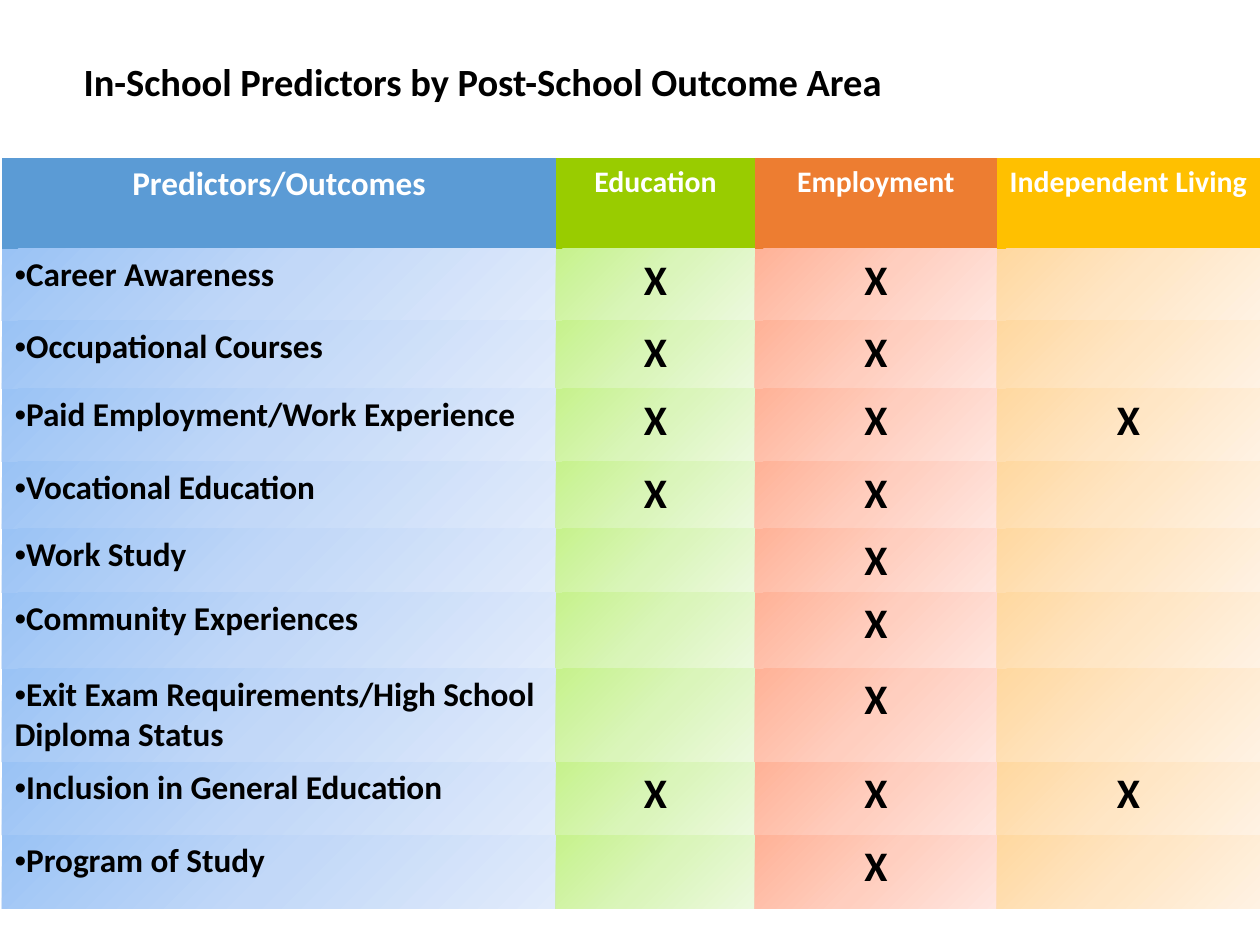
from lxml import etree
from pptx import Presentation, util as u
from pptx.dml import color
from pptx.enum import text
from pptx.oxml import ns

COLORS = {
    "black": "000000",
    "white": "FFFFFF",
    "predictors": "5B9BD5",
    "education": "99CC00",
    "employment": "ED7D31",
    "living": "FFC000",
}
# Start, middle and end of the gradient under each heading
GRADIENTS = {
    "predictors": ("9AC3F5", "C2D8F8", "E1EBFB"),
    "education": ("C6F28C", "DAF5BA", "ECF9DE"),
    "employment": ("FFB297", "FFCEBF", "FFE6E0"),
    "living": ("FFD8A0", "FFE6C5", "FFF2E3"),
}
# Area, heading, heading size, column width
COLUMNS = [
    ("predictors", "Predictors/Outcomes", 19, 554),
    ("education", "Education", 17, 199),
    ("employment", "Employment", 17, 242),
    ("living", "Independent Living", 17, 263),
]
HEADER_HEIGHT = 91
# Predictor, areas it predicts, row height
PREDICTORS = [
    ("Career Awareness", ("education", "employment"), 72),
    ("Occupational Courses", ("education", "employment"), 68),
    ("Paid Employment/Work Experience", ("education", "employment", "living"), 73),
    ("Vocational Education", ("education", "employment"), 67),
    ("Work Study", ("employment",), 63),
    ("Community Experiences", ("employment",), 76),
    ("Exit Exam Requirements/High School Diploma Status", ("employment",), 93),
    ("Inclusion in General Education", ("education", "employment", "living"), 73),
    ("Program of Study", ("employment",), 74),
]
PLAIN_TABLE_STYLE = "{2D5ABB26-0587-4C30-8999-92F81FD0307C}"
CENTER = text.PP_ALIGN.CENTER
LEFT = text.PP_ALIGN.LEFT


def px(length):
    return u.Emu(round(length * 914400 / 126))


class SlideBuilder:
    font = "Calibri"

    def __init__(self, presentation):
        self.slide = presentation.slides.add_slide(presentation.slide_layouts[5])

    def add_text(self, paragraph, words, size, ink="black", align=LEFT):
        paragraph.alignment = align
        run = paragraph.add_run()
        run.text = words
        run.font.name = self.font
        run.font.size = u.Pt(size)
        run.font.bold = True
        run.font.color.rgb = color.RGBColor.from_string(COLORS[ink])

    def title(self, words, left, top, width, height):
        shape = self.slide.shapes.title
        shape.left, shape.top = px(left), px(top)
        shape.width, shape.height = px(width), px(height)
        frame = shape.text_frame
        frame.auto_size = text.MSO_AUTO_SIZE.NONE
        frame.vertical_anchor = text.MSO_ANCHOR.MIDDLE
        frame.paragraphs[0].line_spacing = 0.9
        self.add_text(frame.paragraphs[0], words, 22)

    def table(self, left, top, widths, heights):
        shape = self.slide.shapes.add_table(
            len(heights), len(widths), px(left), px(top),
            px(sum(widths)), px(sum(heights)))
        table = shape.table
        table.horz_banding = False
        style = next(shape._element.iter(ns.qn("a:tableStyleId")))
        style.text = PLAIN_TABLE_STYLE
        for column, width in zip(table.columns, widths):
            column.width = px(width)
        for row, height in zip(table.rows, heights):
            row.height = px(height)
        return table

    def gradient(self, cell, stops):
        properties = cell._tc.get_or_add_tcPr()
        fill = etree.SubElement(properties, ns.qn("a:gradFill"), rotWithShape="1")
        stop_list = etree.SubElement(fill, ns.qn("a:gsLst"))
        for position, value in zip((0, 50000, 100000), stops):
            stop = etree.SubElement(stop_list, ns.qn("a:gs"), pos=str(position))
            etree.SubElement(stop, ns.qn("a:srgbClr"), val=value)
        etree.SubElement(fill, ns.qn("a:lin"), ang="2700000", scaled="0")

    def bullet(self, paragraph):
        properties = paragraph._p.get_or_add_pPr()
        properties.set("marL", "0")
        properties.set("indent", "0")
        etree.SubElement(properties, ns.qn("a:buFont"), typeface="Arial")
        etree.SubElement(properties, ns.qn("a:buChar"), char="•")

    def header_cell(self, cell, words, size, area):
        cell.fill.solid()
        cell.fill.fore_color.rgb = color.RGBColor.from_string(COLORS[area])
        self.add_text(cell.text_frame.paragraphs[0], words, size, "white", CENTER)

    def predictor_cell(self, cell, words):
        paragraph = cell.text_frame.paragraphs[0]
        self.bullet(paragraph)
        self.add_text(paragraph, words, 19)

    def mark_cell(self, cell):
        self.add_text(cell.text_frame.paragraphs[0], "X", 24, align=CENTER)


def main():
    presentation = Presentation()
    presentation.slide_width, presentation.slide_height = px(1260), px(945)
    builder = SlideBuilder(presentation)

    # Title
    builder.title("In-School Predictors by Post-School Outcome Area", 71, 32, 1134, 104)

    # Table and its headings
    table = builder.table(
        2, 158, [column[-1] for column in COLUMNS],
        [HEADER_HEIGHT] + [predictor[-1] for predictor in PREDICTORS])
    for index, (area, heading, size, _) in enumerate(COLUMNS):
        builder.header_cell(table.cell(0, index), heading, size, area)

    # One row per predictor, marked under the areas it predicts
    for row, (predictor, areas, _) in enumerate(PREDICTORS, start=1):
        for index, (area, *_) in enumerate(COLUMNS):
            cell = table.cell(row, index)
            builder.gradient(cell, GRADIENTS[area])
            if area == "predictors":
                builder.predictor_cell(cell, predictor)
            elif area in areas:
                builder.mark_cell(cell)

    presentation.save("out.pptx")


if __name__ == "__main__":
    main()
